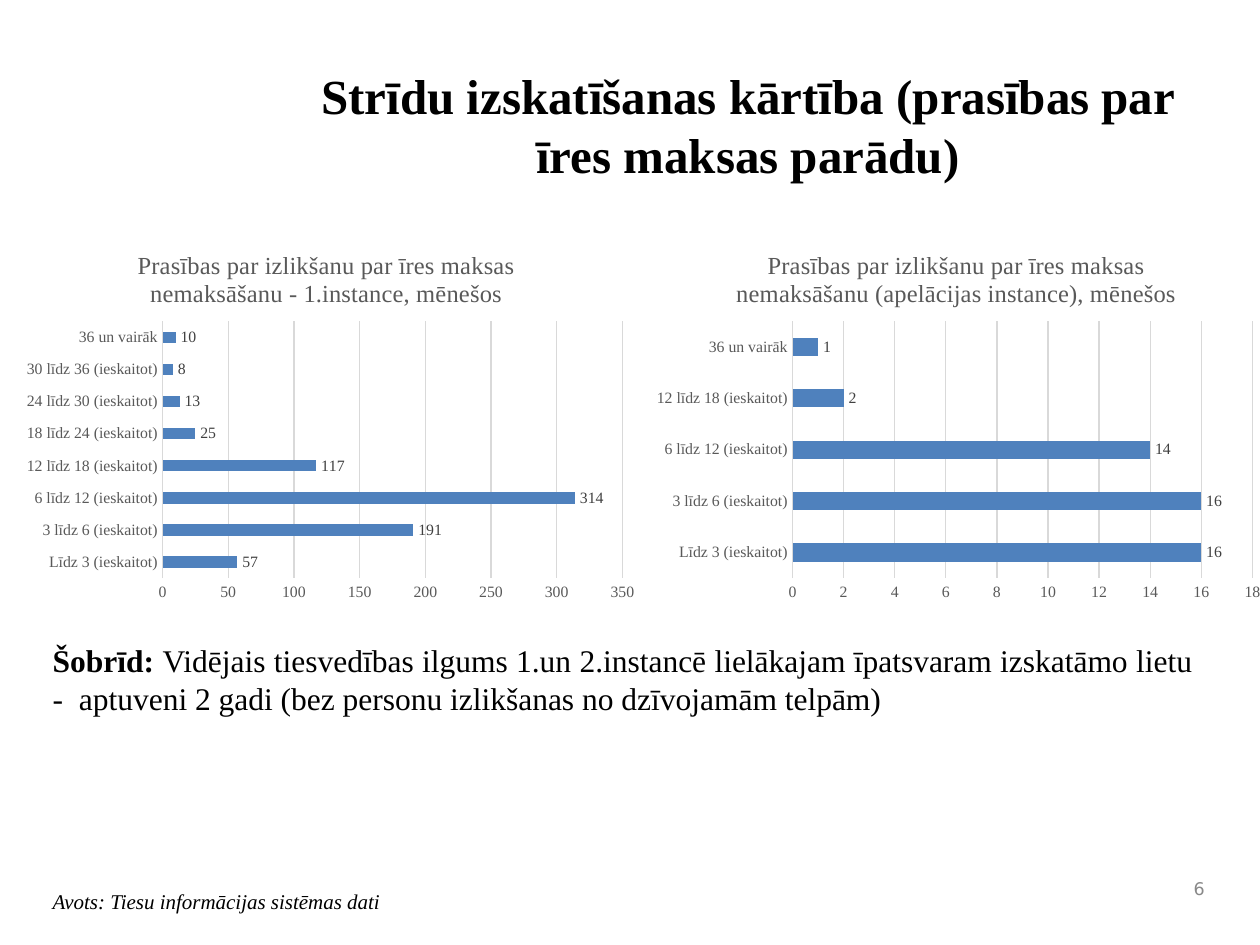
from lxml.etree import SubElement
from pptx import Presentation
from pptx.chart.data import CategoryChartData
from pptx.dml.color import RGBColor
from pptx.enum.chart import XL_CHART_TYPE, XL_LABEL_POSITION, XL_TICK_MARK
from pptx.enum.text import MSO_ANCHOR, MSO_AUTO_SIZE, PP_ALIGN
from pptx.oxml.ns import qn
from pptx.util import Inches, Pt

BLACK = RGBColor(0x00, 0x00, 0x00)
BLUE = RGBColor(0x4F, 0x81, 0xBD)
DARK = RGBColor(0x40, 0x40, 0x40)
GREY = RGBColor(0x59, 0x59, 0x59)
LIGHT = RGBColor(0xD9, 0xD9, 0xD9)
MUTED = RGBColor(0x89, 0x89, 0x89)
SERIF = "Times New Roman"
SANS = "DejaVu Sans"


class Deck:
    def __init__(self):
        self.prs = Presentation()
        self.prs.slide_width = Inches(10)
        self.prs.slide_height = Inches(7.5)
        self.slide = self.prs.slides.add_slide(self.prs.slide_layouts[5])

    def style(self, font, size, color, bold=False, italic=False, name=SERIF):
        font.name, font.size = name, Pt(size)
        font.bold, font.italic = bold, italic
        font.color.rgb = color

    def run(self, par, text, size, color=BLACK, **look):
        run = par.add_run()
        run.text = text
        self.style(run.font, size, color, **look)

    def title(self, text, left, top, width, height):
        box = self.slide.shapes.title
        box.left, box.top = Inches(left), Inches(top)
        box.width, box.height = Inches(width), Inches(height)
        frame = box.text_frame
        frame.auto_size = MSO_AUTO_SIZE.NONE
        frame.vertical_anchor = MSO_ANCHOR.MIDDLE
        par = frame.paragraphs[0]
        par.alignment = PP_ALIGN.CENTER
        self.run(par, text, 28, bold=True)

    def text(self, left, top, width, height, align=PP_ALIGN.LEFT):
        box = self.slide.shapes.add_textbox(
            Inches(left), Inches(top), Inches(width), Inches(height))
        box.text_frame.word_wrap = True
        par = box.text_frame.paragraphs[0]
        par.alignment = align
        return par

    def chart(self, head, cats, vals, left, peak, step):
        data = CategoryChartData()
        data.categories = cats
        data.add_series("Series 1", vals)
        chart = self.slide.shapes.add_chart(
            XL_CHART_TYPE.BAR_CLUSTERED, Inches(left), Inches(1.83),
            Inches(5), Inches(3), data).chart
        self.style(chart.font, 10, BLACK)
        chart.has_legend = False
        chart.has_title = True
        self.run(chart.chart_title.text_frame.paragraphs[0], head, 14, GREY)
        chart.chart_title.include_in_layout = False

        # Axes
        for axis in (chart.category_axis, chart.value_axis):
            axis.major_tick_mark = axis.minor_tick_mark = XL_TICK_MARK.NONE
            self.style(axis.tick_labels.font, 9, GREY)
        line = chart.category_axis.format.line
        line.color.rgb, line.width = LIGHT, Pt(0.75)
        axis = chart.value_axis
        axis.format.line.fill.background()
        axis.minimum_scale, axis.maximum_scale = 0, peak
        axis.major_unit = step
        grid = axis.major_gridlines.format.line
        grid.color.rgb, grid.width = LIGHT, Pt(0.75)

        # Bars and labels
        plot = chart.plots[0]
        plot.gap_width = 182
        plot.vary_by_categories = False
        fill = plot.series[0].format.fill
        fill.solid()
        fill.fore_color.rgb = BLUE
        plot.has_data_labels = True
        labels = plot.data_labels
        labels.show_value = True
        labels.position = XL_LABEL_POSITION.OUTSIDE_END
        self.style(labels.font, 9, DARK)
        self.place(chart)

    def place(self, chart):
        """Fix the inner plot area as shares of the chart."""
        area = chart.plots[0]._element.getparent()
        for old in area.findall(qn("c:layout")):
            area.remove(old)
        layout = SubElement(area, qn("c:layout"))
        area.insert(0, layout)
        inner = SubElement(layout, qn("c:manualLayout"))
        for tag, val in (("layoutTarget", "inner"), ("xMode", "edge"),
                         ("yMode", "edge"), ("x", "0.24"), ("y", "0.24"),
                         ("w", "0.73"), ("h", "0.68")):
            SubElement(inner, qn("c:" + tag)).set("val", val)


def main():
    deck = Deck()
    deck.title("Strīdu izskatīšanas kārtība (prasības par īres maksas parādu)",
               2.37, 0.42, 7.13, 1.13)

    # Slide number
    par = deck.text(9.18, 6.92, 0.48, 0.33, PP_ALIGN.RIGHT)
    deck.run(par, "6", 10, MUTED, name=SANS)

    # Charts side by side
    spans = ["Līdz 3 (ieskaitot)", "3 līdz 6 (ieskaitot)",
             "6 līdz 12 (ieskaitot)", "12 līdz 18 (ieskaitot)",
             "18 līdz 24 (ieskaitot)", "24 līdz 30 (ieskaitot)",
             "30 līdz 36 (ieskaitot)", "36 un vairāk"]
    head = "Prasības par izlikšanu par īres maksas nemaksāšanu "
    deck.chart(head + "- 1.instance, mēnešos", spans,
               (57, 191, 314, 117, 25, 13, 8, 10), 0.09, 350, 50)
    deck.chart(head + "(apelācijas instance), mēnešos",
               spans[:4] + spans[-1:], (16, 16, 14, 2, 1), 5.09, 18, 2)

    # Finding and source
    par = deck.text(0.32, 5.04, 9.25, 0.71, PP_ALIGN.JUSTIFY)
    deck.run(par, "Šobrīd: ", 18, bold=True)
    deck.run(par, "Vidējais tiesvedības ilgums 1.un 2.instancē lielākajam "
             "īpatsvaram izskatāmo lietu -  aptuveni 2 gadi (bez personu "
             "izlikšanas no dzīvojamām telpām)", 18)
    par = deck.text(0.32, 7, 5, 0.3)
    deck.run(par, "Avots: Tiesu informācijas sistēmas dati", 12, italic=True)

    deck.prs.save("out.pptx")


if __name__ == "__main__":
    main()
